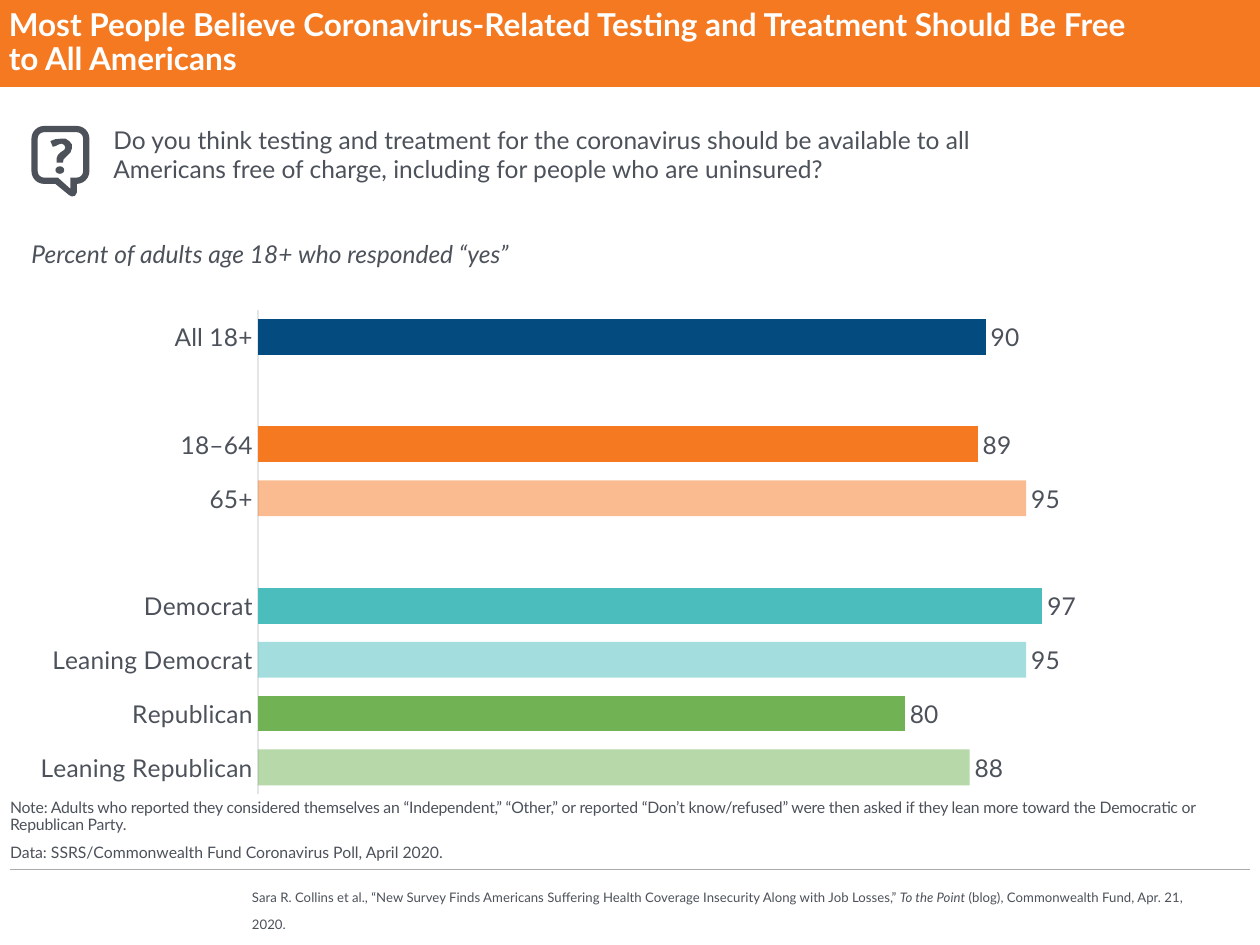
from math import cos, sin, radians

from lxml import etree
from pptx import Presentation
from pptx import util as u
from pptx.chart import data as cd
from pptx.dml.color import RGBColor
from pptx.enum import chart as ch, shapes as sh, text as tx
from pptx.oxml import ns

Inches, Pt = u.Inches, u.Pt
HEX = {"orange": "F47920", "ink": "4C515A", "rule": "ABABAB", "axis": "E3E5E7",
       "blue": "044C7F", "green": "71B254", "teal": "4ABDBC", "white": "FFFFFF"}

# Label, value, colour, pale or not; listed from bottom to top
BARS = [("Leaning Republican", 88, "green", True), ("Republican", 80, "green", False),
        ("Leaning Democrat", 95, "teal", True), ("Democrat", 97, "teal", False),
        ("", None, "teal", False), ("65+", 95, "orange", True),
        ("18–64", 89, "orange", False), ("", None, "orange", False),
        ("All 18+", 90, "blue", False)]

# Hook of the question mark, in inches from the icon's corner
HOOK = [(.15, .12), (.19, .105), (.24, .10), (.27, .10), (.30, .12), (.32, .145),
        (.32, .18), (.31, .21), (.29, .23), (.27, .25), (.255, .265), (.25, .29),
        (.20, .29), (.20, .255), (.21, .23), (.23, .21), (.26, .19), (.27, .17),
        (.26, .15), (.24, .14), (.22, .145), (.19, .16), (.17, .165)]


def rgb(name):
    return RGBColor.from_string(HEX[name])


def style(font, color="ink", **vals):
    for key, val in {"name": "Lato", **vals}.items():
        setattr(font, key, val)
    font.color.rgb = rgb(color)


def paint(shape, color):
    shape.shadow.inherit = False
    shape.fill.solid()
    shape.fill.fore_color.rgb = rgb(color)
    shape.line.fill.background()


def frame(shape, anchor="TOP", pads=(0, 0, 0, 0)):
    body = shape.text_frame
    body.word_wrap = True
    body.auto_size = tx.MSO_AUTO_SIZE.NONE
    body.vertical_anchor = getattr(tx.MSO_ANCHOR, anchor)
    for side, pad in zip(("left", "top", "right", "bottom"), pads):
        setattr(body, "margin_" + side, Inches(pad))
    return body


def write(slide, box, paras, anchor="TOP", pads=(0, 0, 0, 0), para=None, **font):
    """Each paragraph is a list of (text, italic) runs."""
    body = frame(slide.shapes.add_textbox(*map(Inches, box)), anchor, pads)
    for i, runs in enumerate(paras):
        par = body.add_paragraph() if i else body.paragraphs[0]
        for key, val in (para or {}).items():
            setattr(par, key, val)
        for words, slant in runs:
            run = par.add_run()
            run.text = words
            style(run.font, italic=slant, **font)
    return body


def header(slide, box):
    band = slide.shapes.add_shape(sh.MSO_SHAPE.RECTANGLE, *map(Inches, box))
    paint(band, "orange")
    title = slide.shapes.title
    slide.shapes._spTree.append(title._element)  # title in front of band
    x, y, w, h = box
    title.left, title.top, title.width, title.height = map(
        Inches, (x + 0.07, y, w - 0.16, h))
    body = frame(title, "MIDDLE")
    body.text = ("Most People Believe Coronavirus-Related Testing and Treatment "
                 "Should Be Free \vto All Americans")
    par = body.paragraphs[0]
    par.alignment, par.line_spacing = tx.PP_ALIGN.LEFT, 0.9
    for run in par.runs:
        style(run.font, "white", size=Pt(18), bold=True)


def bubble(left, top, right, base, rad, tail):
    """Rounded box, clockwise, with the tail points in its bottom edge."""
    spots = []
    for cx, cy, turn in ((right - rad, top + rad, 270), (right - rad, base - rad, 0),
                         (left + rad, base - rad, 90), (left + rad, top + rad, 180)):
        if turn == 90:
            spots += tail
        spots += [(cx + rad * cos(radians(turn + step)), cy + rad * sin(radians(turn + step)))
                  for step in range(0, 91, 15)]
    return spots


def icon(slide, x, y):
    def trace(*rings):
        rings = [[(Inches(x + a), Inches(y + b)) for a, b in ring] for ring in rings]
        pen = slide.shapes.build_freeform(*rings[0][0])
        for i, ring in enumerate(rings):
            if i:
                pen.move_to(*ring[0])
            pen.add_line_segments(ring[1:], close=True)
        paint(pen.convert_to_shape(), "ink")

    trace(bubble(0, 0, .46, .46, .1, [(.36, .46), (.36, .53), (.345, .555), (.32, .56),
                                      (.30, .55), (.19, .46)]),
          bubble(.05, .05, .41, .41, .05, [(.31, .41), (.31, .50), (.21, .41)]))
    trace(HOOK)
    dot = slide.shapes.add_shape(sh.MSO_SHAPE.OVAL, Inches(x + .19), Inches(y + .32),
                                 Inches(.07), Inches(.06))
    paint(dot, "ink")


def question(slide, box):
    write(slide, box, [[("Do you think testing and treatment for the coronavirus should be "
                         "available to all Americans free of charge, including for people "
                         "who are uninsured?", False)]],
          "MIDDLE", (0.7, 0.05, 0.1, 0.05), size=Pt(14))
    icon(slide, box[0] + 0.05, box[1] + 0.12)
    write(slide, (0.25, 1.9, 7.86, 0.16),
          [[("Percent of adults age 18+ who responded “yes”", True)]], size=Pt(14))


def layout(chart):
    """Fix the inner plot area as shares of the chart."""
    area = chart._chartSpace.chart.plotArea
    for old in area.findall(ns.qn("c:layout")):
        area.remove(old)
    outer = etree.Element(ns.qn("c:layout"))
    inner = etree.SubElement(outer, ns.qn("c:manualLayout"))
    for tag, val in (("layoutTarget", "inner"), ("xMode", "edge"), ("yMode", "edge"),
                     ("x", 0.19), ("y", 0.04), ("w", 0.81), ("h", 0.96)):
        etree.SubElement(inner, ns.qn("c:" + tag)).set("val", str(val))
    area.insert(0, outer)


def bars(slide, box):
    data = cd.CategoryChartData()
    data.categories = [bar[0] for bar in BARS]
    data.add_series("Series 1", [bar[1] for bar in BARS])
    chart = slide.shapes.add_chart(ch.XL_CHART_TYPE.BAR_CLUSTERED,
                                   *map(Inches, box), data).chart
    chart.has_legend = chart.has_title = False
    style(chart.font, name="Cabin", size=Pt(10))
    layout(chart)

    cat, val = chart.category_axis, chart.value_axis
    cat.major_tick_mark = cat.minor_tick_mark = ch.XL_TICK_MARK.NONE
    cat.format.line.color.rgb = rgb("axis")
    cat.format.line.width = Pt(0.75)
    style(cat.tick_labels.font, size=Pt(14))
    val.minimum_scale, val.maximum_scale = 0, 120
    val.visible = val.has_major_gridlines = False

    plot = chart.plots[0]
    plot.gap_width, plot.vary_by_categories = 50, False
    row = plot.series[0]
    row.format.fill.solid()
    row.format.fill.fore_color.rgb = rgb("blue")
    tags = row.data_labels
    tags.show_value, tags.position = True, ch.XL_LABEL_POSITION.OUTSIDE_END
    style(tags.font, size=Pt(14))
    for i, (_, _, color, pale) in enumerate(BARS):
        fill = row.points[i].format.fill
        fill.solid()
        fill.fore_color.rgb = rgb(color)
        if pale:
            tone = row.points[i]._element.findall(".//" + ns.qn("a:srgbClr"))
            for node in tone:
                if node.get("val") == HEX[color] and node.find(ns.qn("a:alpha")) is None \
                        and node.getparent().getparent().getparent().find(
                            ns.qn("c:idx")) is not None \
                        and node.getparent().getparent().getparent().find(
                            ns.qn("c:idx")).get("val") == str(i):
                    etree.SubElement(node, ns.qn("a:alpha")).set("val", "50000")


def notes(slide, box):
    body = write(slide, box, [
        [("Note: Adults who reported they considered themselves an “Independent,” “Other,” "
          "or reported “Don’t know/refused” were then asked if they lean more toward the "
          "Democratic or Republican Party.", False)],
        [("Data: SSRS/Commonwealth Fund Coronavirus Poll, April 2020.", False)]],
        "BOTTOM", para={"line_spacing": 0.9, "space_after": Pt(6)}, size=Pt(9))
    body.paragraphs[0].runs[0].font._element.set("spc", "-10")


def footer(slide, box):
    rule = slide.shapes.add_connector(sh.MSO_CONNECTOR.STRAIGHT, Inches(0.08), Inches(6.9),
                                      Inches(9.92), Inches(6.9))
    rule.line.color.rgb, rule.line.width = rgb("rule"), Pt(0.75)
    etree.SubElement(rule._element.spPr, ns.qn("a:effectLst"))
    body = write(slide, box, [[
        ("Sara R. Collins et al., “New Survey Finds Americans Suffering Health Coverage "
         "Insecurity Along with Job Losses,” ", False), ("To the Point", True),
        (" (blog), Commonwealth Fund, Apr. 21, 2020.", False)]], "MIDDLE", size=Pt(13))
    for run in body.paragraphs[0].runs:
        run.font._element.set("baseline", "30000")


def main():
    deck = Presentation()
    deck.slide_width, deck.slide_height = Inches(10), Inches(7.5)
    slide = deck.slides.add_slide(deck.slide_layouts[5])
    header(slide, (0, 0, 10, 0.69))
    question(slide, (0.2, 0.88, 8.45, 0.69))
    bars(slide, (0.24, 2.3, 9.51, 4.01))
    notes(slide, (0.08, 6.3, 9.84, 0.54))
    footer(slide, (2, 7.1, 7.6, 0.3))
    deck.save("out.pptx")


if __name__ == "__main__":
    main()
